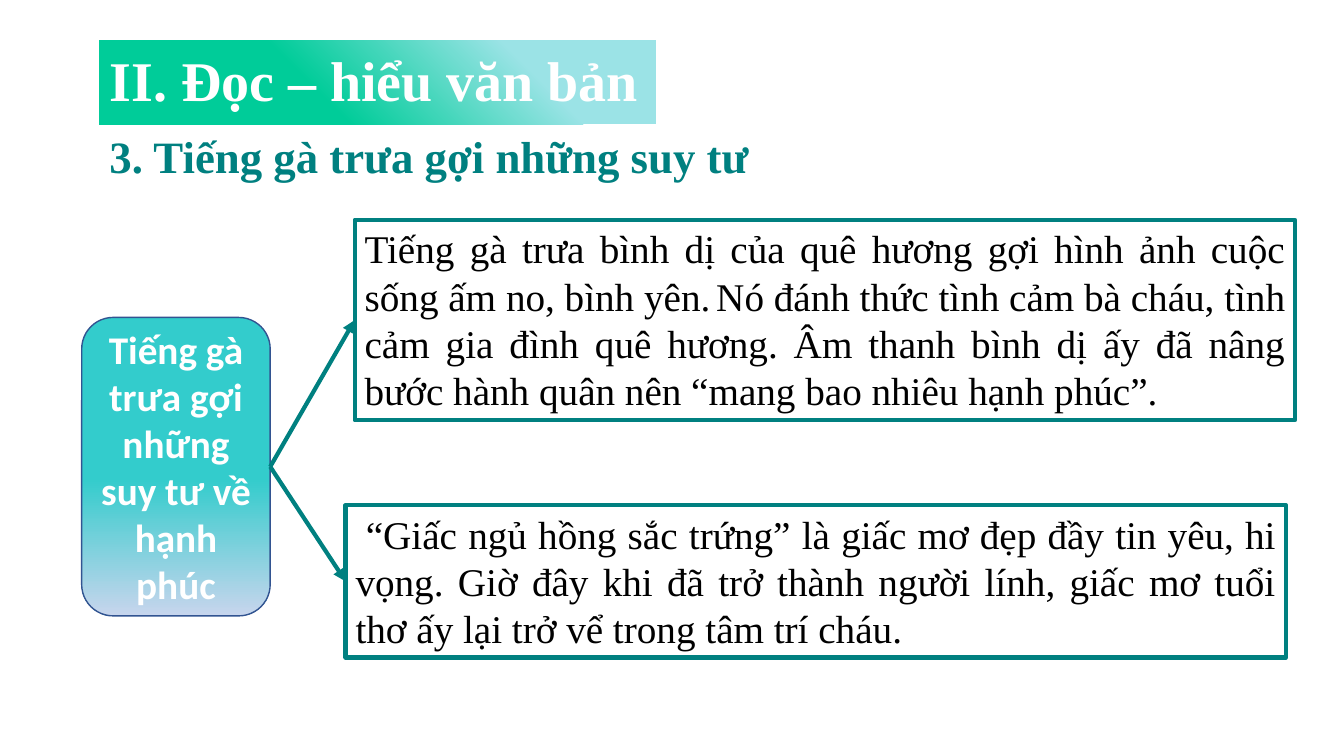
from lxml.etree import SubElement
from pptx import Presentation
from pptx.dml.color import RGBColor
from pptx.enum.shapes import MSO_CONNECTOR, MSO_SHAPE
from pptx.enum.text import MSO_ANCHOR, MSO_AUTO_SIZE, PP_ALIGN
from pptx.oxml.ns import qn
from pptx.util import Cm, Pt

TEAL = RGBColor(0x00, 0x80, 0x80)
GREEN = RGBColor(0x00, 0xCC, 0x99)
PALE_CYAN = RGBColor(0x9B, 0xE3, 0xE6)
TURQUOISE = RGBColor(0x33, 0xCC, 0xCC)
PALE_BLUE = RGBColor(0xC7, 0xD5, 0xED)
NAVY = RGBColor(0x32, 0x54, 0x91)
WHITE = RGBColor(0xFF, 0xFF, 0xFF)
BLACK = RGBColor(0x00, 0x00, 0x00)

SERIF = "Times New Roman"
SANS = "Calibri"
LEFT_SIDE, RIGHT_SIDE = 1, 3


def write(shape, *pieces, size=28, font=SERIF, color=BLACK, bold=False,
          align=PP_ALIGN.LEFT, anchor=MSO_ANCHOR.TOP, grow=True):
    """Fill one paragraph; a piece is a text, or (text, font, size) to differ."""
    frame = shape.text_frame
    frame.word_wrap = True
    frame.auto_size = MSO_AUTO_SIZE.SHAPE_TO_FIT_TEXT if grow else MSO_AUTO_SIZE.NONE
    frame.vertical_anchor = anchor
    paragraph = frame.paragraphs[0]
    paragraph.alignment = align
    for piece in pieces:
        text, run_font, run_size = (piece, font, size) if isinstance(piece, str) else piece
        run = paragraph.add_run()
        run.text = text
        run.font.name = run_font
        run.font.size = Pt(run_size)
        run.font.bold = bold
        run.font.color.rgb = color
    return paragraph


def place(shape, left, top, width, height):
    shape.left, shape.top = Cm(left), Cm(top)
    shape.width, shape.height = Cm(width), Cm(height)


def fill_gradient(shape, angle, *stops):
    """Blend two (position, colour) stops; the angle runs counter-clockwise."""
    shape.fill.gradient()
    shape.fill.gradient_angle = angle
    for stop, (position, color) in zip(shape.fill.gradient_stops, stops):
        stop.position = position
        stop.color.rgb = color


def add_box(slide, kind, left, top, width, height, line_color, line_width):
    box = slide.shapes.add_shape(kind, Cm(left), Cm(top), Cm(width), Cm(height))
    box.shadow.inherit = False
    box.fill.background()
    box.line.color.rgb = line_color
    box.line.width = Pt(line_width)
    return box


def add_idea(slide, left, top, height, *pieces):
    idea = add_box(slide, MSO_SHAPE.RECTANGLE, left, top, 23.7, height, TEAL, 3)
    write(idea, *pieces, align=PP_ALIGN.JUSTIFY)
    return idea


def add_arrow(slide, source, target):
    arrow = slide.shapes.add_connector(MSO_CONNECTOR.STRAIGHT, 0, 0, 0, 0)
    arrow.begin_connect(source, RIGHT_SIDE)
    arrow.end_connect(target, LEFT_SIDE)
    arrow.line.color.rgb = TEAL
    arrow.line.width = Pt(3)
    SubElement(arrow.line._get_or_add_ln(), qn("a:tailEnd"), type="triangle")
    SubElement(arrow._element.spPr, qn("a:effectLst"))


def main():
    presentation = Presentation()
    presentation.slide_width, presentation.slide_height = Cm(33.87), Cm(19.05)
    slide = presentation.slides.add_slide(presentation.slide_layouts[5])

    heading = slide.shapes.title
    place(heading, 2.51, 1.02, 14.02, 1.96)
    fill_gradient(heading, 225, (0.24, PALE_CYAN), (0.61, GREEN))
    write(heading, "II. Đọc – hiểu văn bản", size=40, color=WHITE, bold=True)

    subheading = slide.shapes.add_textbox(Cm(2.51), Cm(2.92), Cm(29.41), Cm(1.7))
    line = write(subheading, "3. Tiếng gà trưa gợi những suy tư", size=32, color=TEAL, bold=True)
    line.line_spacing = 1.15
    line.space_after = Pt(10)

    topic = add_box(slide, MSO_SHAPE.ROUNDED_RECTANGLE, 2.06, 8, 4.75, 7.52, NAVY, 1)
    fill_gradient(topic, 270, (0.54, TURQUOISE), (1, PALE_BLUE))
    write(topic, "Tiếng gà trưa gợi những suy tư về hạnh phúc", font=SANS, color=WHITE,
          bold=True, align=PP_ALIGN.CENTER, anchor=MSO_ANCHOR.MIDDLE, grow=False)

    homeland = add_idea(
        slide, 8.94, 5.54, 5.05,
        "Tiếng gà trưa bình dị của quê hương gợi hình ảnh cuộc sống ấm no, bình yên.",
        (" ", SANS, 18),
        "Nó đánh thức tình cảm bà cháu, tình cảm gia đình quê hương. Âm thanh bình dị ấy "
        "đã nâng bước hành quân nên “mang bao nhiêu hạnh phúc”.")
    dream = add_idea(
        slide, 8.71, 12.73, 3.84,
        (" ", SANS, 28),
        "“Giấc ngủ hồng sắc trứng” là giấc mơ đẹp đầy tin yêu, hi vọng. Giờ đây khi đã trở "
        "thành người lính, giấc mơ tuổi thơ ấy lại trở vể trong tâm trí cháu.")

    for idea in (homeland, dream):
        add_arrow(slide, topic, idea)

    presentation.save("out.pptx")


if __name__ == "__main__":
    main()
